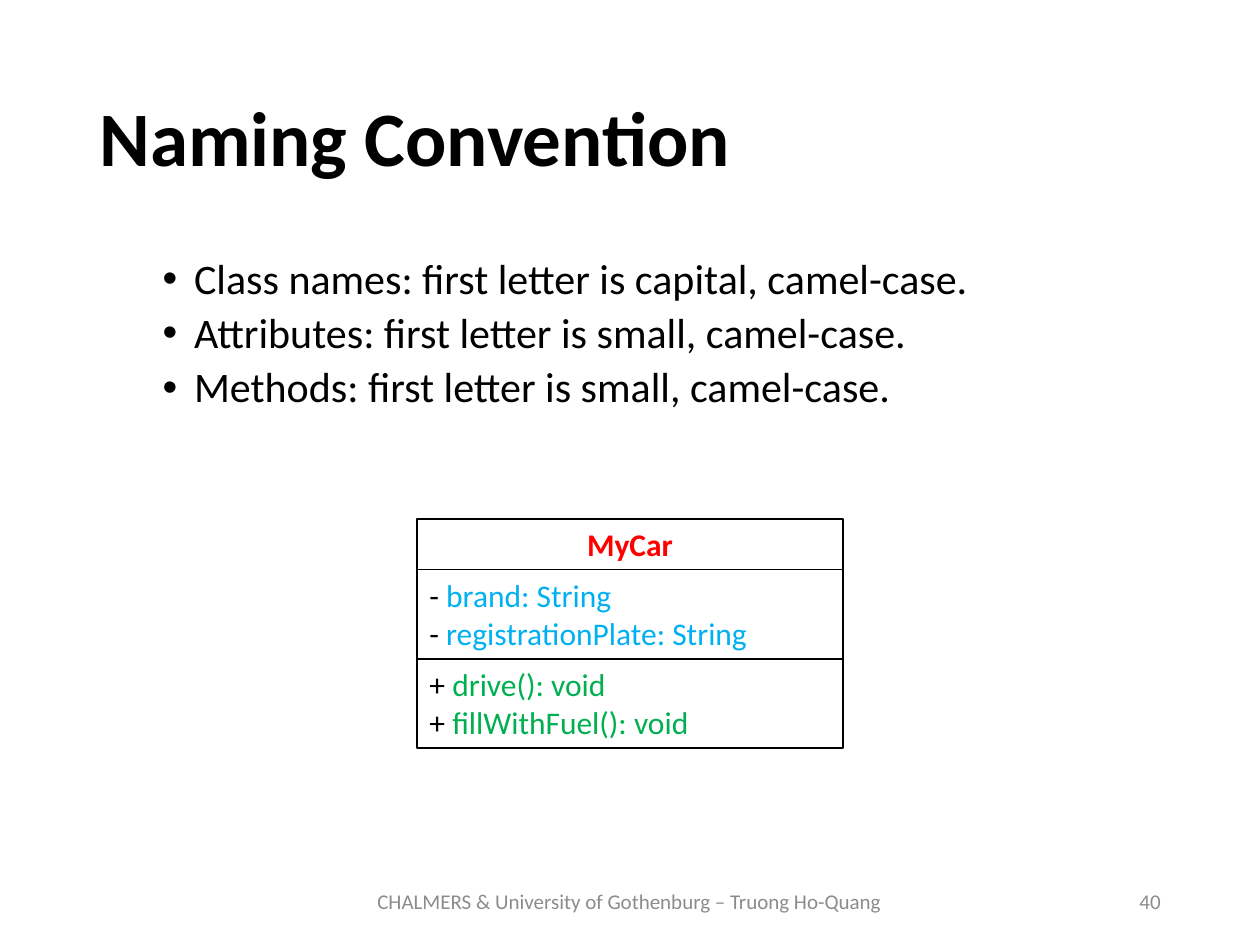
"""Build the naming convention slide with a small UML class."""
import pptx
import pptx.dml.color
import pptx.enum.shapes
import pptx.enum.text
import pptx.oxml.ns
import pptx.util
from lxml import etree

Inches = pptx.util.Inches
Pt = pptx.util.Pt
ALIGN = pptx.enum.text.PP_ALIGN
ANCHOR = pptx.enum.text.MSO_ANCHOR
AUTO_SIZE = pptx.enum.text.MSO_AUTO_SIZE

BLACK, WHITE, GREY = "000000", "FFFFFF", "8C8C8C"
RED, BLUE, GREEN = "FF0000", "00B0F0", "00B050"


def rgb(value):
    return pptx.dml.color.RGBColor.from_string(value)


def add_run(paragraph, text, size, color, bold=False):
    run = paragraph.add_run()
    run.text = text
    run.font.name = "Calibri"
    run.font.size = Pt(size)
    run.font.bold = bold
    run.font.color.rgb = rgb(color)


def next_paragraph(frame, index):
    return frame.add_paragraph() if index else frame.paragraphs[0]


def place(shape, left, top, width, height):
    shape.left, shape.top = Inches(left), Inches(top)
    shape.width, shape.height = Inches(width), Inches(height)


def fill_title(title, text):
    place(title, 0.69, 0.4, 8.62, 1.45)
    frame = title.text_frame
    frame.auto_size = AUTO_SIZE.NONE
    frame.vertical_anchor = ANCHOR.MIDDLE
    heading = frame.paragraphs[0]
    heading.alignment = ALIGN.LEFT
    heading.line_spacing = 0.9
    add_run(heading, text, 44, BLACK, bold=True)


def add_bullet(paragraph):
    properties = paragraph._p.get_or_add_pPr()
    properties.set("marL", str(Inches(0.75)))
    properties.set("indent", str(Inches(-0.25)))
    for tag, key, value in (("a:buFont", "typeface", "Arial"), ("a:buChar", "char", "•")):
        etree.SubElement(properties, pptx.oxml.ns.qn(tag)).set(key, value)


def fill_rules(body, rules):
    place(body, 0.69, 2, 8.62, 4.76)
    frame = body.text_frame
    frame.auto_size = AUTO_SIZE.NONE
    frame.vertical_anchor = ANCHOR.TOP
    for index, rule in enumerate(rules):
        paragraph = next_paragraph(frame, index)
        paragraph.level = 1
        add_bullet(paragraph)
        paragraph.line_spacing = 0.9
        paragraph.space_before = Pt(5 if index else 0)
        add_run(paragraph, rule, 24, BLACK)


def add_compartment(slide, top, height, lines, align=ALIGN.LEFT, bold=False):
    compartment = slide.shapes.add_shape(
        pptx.enum.shapes.MSO_SHAPE.RECTANGLE,
        Inches(3.31), Inches(top), Inches(3.38), Inches(height))
    compartment.shadow.inherit = False
    compartment.fill.solid()
    compartment.fill.fore_color.rgb = rgb(WHITE)
    compartment.line.color.rgb = rgb(BLACK)
    compartment.line.width = Pt(1)
    frame = compartment.text_frame
    frame.word_wrap = True
    frame.auto_size = AUTO_SIZE.SHAPE_TO_FIT_TEXT
    frame.vertical_anchor = ANCHOR.TOP
    for index, line in enumerate(lines):
        paragraph = next_paragraph(frame, index)
        paragraph.alignment = align
        for text, color in line:
            add_run(paragraph, text, 18, color, bold)


def add_footer(slide, left, width, text, align):
    footer = slide.shapes.add_textbox(Inches(left), Inches(6.95), Inches(width), Inches(0.4))
    frame = footer.text_frame
    frame.word_wrap = True
    frame.vertical_anchor = ANCHOR.MIDDLE
    frame.paragraphs[0].alignment = align
    add_run(frame.paragraphs[0], text, 12, GREY)


def main():
    presentation = pptx.Presentation()
    presentation.slide_width, presentation.slide_height = Inches(10), Inches(7.5)
    slide = presentation.slides.add_slide(presentation.slide_layouts[1])

    fill_title(slide.shapes.title, "Naming Convention")
    fill_rules(slide.placeholders[1], [
        "Class names: first letter is capital, camel-case.",
        "Attributes: first letter is small, camel-case.",
        "Methods: first letter is small, camel-case.",
    ])

    add_compartment(slide, 4.12, 0.4, [[("MyCar", RED)]], ALIGN.CENTER, bold=True)
    add_compartment(slide, 4.52, 1.01, [
        [("- ", BLACK), ("brand: String", BLUE)],
        [("-", BLACK), (" registrationPlate: String", BLUE)],
    ])
    add_compartment(slide, 5.23, 0.71, [
        [("+ ", BLACK), ("drive(): void", GREEN)],
        [("+ ", BLACK), ("fillWithFuel(): void", GREEN)],
    ])

    add_footer(slide, 7.06, 2.25, "40", ALIGN.RIGHT)
    add_footer(slide, 2.72, 4.55,
               "CHALMERS & University of Gothenburg – Truong Ho-Quang", ALIGN.CENTER)
    presentation.save("out.pptx")


if __name__ == "__main__":
    main()
